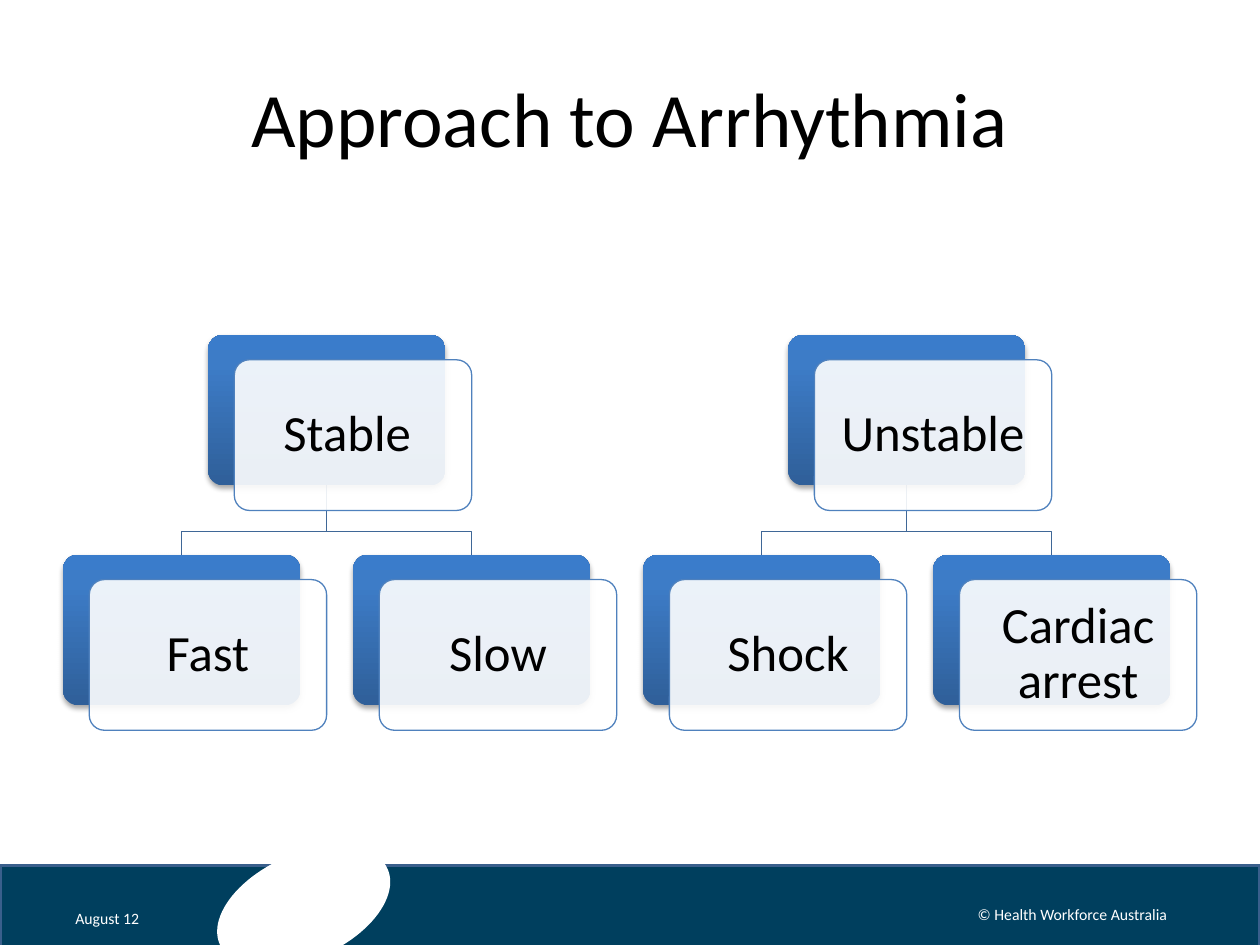
from lxml.etree import SubElement
from pptx import Presentation
from pptx.dml.color import RGBColor
from pptx.enum.shapes import MSO_SHAPE
from pptx.enum.text import MSO_ANCHOR, PP_ALIGN
from pptx.oxml import parse_xml
from pptx.oxml.ns import nsdecls, qn
from pptx.util import Pt

# Content
TITLE = "Approach to Arrhythmia"
BRANCHES = [
    ("Stable ", ["Fast", "Slow"]),
    ("Unstable", ["Shock", "Cardiac arrest"]),
]
DATE = "August 12"
COPYRIGHT = "© Health Workforce Australia"

# Colours
BLACK = RGBColor(0x00, 0x00, 0x00)
WHITE = RGBColor(0xFF, 0xFF, 0xFF)
NAVY = RGBColor(0x00, 0x3F, 0x5E)
BAND_EDGE = RGBColor(0x3A, 0x5F, 0x8C)
LINK_BLUE = RGBColor(0x3F, 0x67, 0x97)
CARD_EDGE = RGBColor(0x4F, 0x81, 0xBD)
CARD_GRADIENT = [
    (0, RGBColor(0x2F, 0x5F, 0x99)),
    (80, RGBColor(0x3D, 0x7C, 0xC7)),
    (100, RGBColor(0x3A, 0x7C, 0xCB)),
]

# Layout, in points
CARD_WIDTH, CARD_HEIGHT = 135.6, 86.1
LEFT, COLUMN_STEP = 36, 165.75
PARENT_TOP, CHILD_TOP = 191.3, 316.9
FRONT_RIGHT, FRONT_DOWN = 15.05, 14.3
LINK_BEND = 303.9


def write(shape, text, size=9, color=WHITE, align=PP_ALIGN.LEFT,
          inset=(7.2, 3.6), line_spacing=None):
    frame = shape.text_frame
    frame.word_wrap = True
    frame.vertical_anchor = MSO_ANCHOR.MIDDLE
    frame.margin_left = frame.margin_right = Pt(inset[0])
    frame.margin_top = frame.margin_bottom = Pt(inset[1])
    para = frame.paragraphs[0]
    para.alignment = align
    para.line_spacing = line_spacing
    span = para.add_run()
    span.text = text
    span.font.name = "Calibri"
    span.font.size = Pt(size)
    span.font.color.rgb = color


def add_shape(page, kind, left, top, width, height, fill=None, line=None, weight=0.75):
    shape = page.shapes.add_shape(kind, Pt(left), Pt(top), Pt(width), Pt(height))
    shape.shadow.inherit = False
    if fill is not None:
        shape.fill.solid()
        shape.fill.fore_color.rgb = fill
    if line is None:
        shape.line.fill.background()
    else:
        shape.line.color.rgb = line
        shape.line.width = Pt(weight)
    return shape


def set_gradient(shape, stops):
    shape.fill.background()
    marks = "".join(
        f'<a:gs pos="{position * 1000}"><a:srgbClr val="{color}"/></a:gs>'
        for position, color in stops)
    gradient = parse_xml(
        f'<a:gradFill {nsdecls("a")} rotWithShape="1"><a:gsLst>{marks}</a:gsLst>'
        '<a:lin ang="16200000" scaled="0"/></a:gradFill>')
    properties = shape.fill._xPr
    properties.replace(properties.find(qn("a:noFill")), gradient)


def set_shadow(shape):
    effects = shape.fill._xPr.find(qn("a:effectLst"))
    shadow = SubElement(effects, qn("a:outerShdw"), blurRad=str(Pt(3.1)),
                        dist=str(Pt(1.8)), dir="5400000", rotWithShape="0")
    color = SubElement(shadow, qn("a:srgbClr"), val=str(BLACK))
    SubElement(color, qn("a:alpha"), val="35000")


def add_card(page, text, left, top):
    back = add_shape(page, MSO_SHAPE.ROUNDED_RECTANGLE, left, top, CARD_WIDTH, CARD_HEIGHT)
    set_gradient(back, CARD_GRADIENT)
    set_shadow(back)
    front = add_shape(page, MSO_SHAPE.ROUNDED_RECTANGLE, left + FRONT_RIGHT,
                      top + FRONT_DOWN, CARD_WIDTH, CARD_HEIGHT,
                      fill=WHITE, line=CARD_EDGE)
    white = front.fill._xPr.find(qn("a:solidFill"))[0]
    SubElement(white, qn("a:alpha"), val="90000")
    for shape in (back, front):
        shape.adjustments[0] = 0.1
    write(front, text, size=29, color=BLACK, align=PP_ALIGN.CENTER,
          inset=(11, 11), line_spacing=0.9)


def add_link(page, parent_left, child_left):
    start, end = (left + CARD_WIDTH / 2 for left in (parent_left, child_left))
    builder = page.shapes.build_freeform(Pt(start), Pt(PARENT_TOP + CARD_HEIGHT))
    corners = [(start, LINK_BEND), (end, LINK_BEND), (end, CHILD_TOP)]
    builder.add_line_segments([(Pt(x), Pt(y)) for x, y in corners], close=False)
    link = builder.convert_to_shape()
    link.shadow.inherit = False
    link.fill.background()
    link.line.color.rgb = LINK_BLUE
    link.line.width = Pt(0.75)


def add_text(page, text, left, top, width, height, **style):
    box = page.shapes.add_textbox(Pt(left), Pt(top), Pt(width), Pt(height))
    write(box, text, **style)


def main():
    deck = Presentation()
    deck.slide_width, deck.slide_height = Pt(720), Pt(540)
    page = deck.slides.add_slide(deck.slide_layouts[5])

    # Footer band with white oval
    add_shape(page, MSO_SHAPE.RECTANGLE, 0, 494.6, 720, 46.8,
              fill=NAVY, line=BAND_EDGE, weight=2)
    oval = add_shape(page, MSO_SHAPE.OVAL, 121, 488.2, 105.1, 59.8, fill=WHITE)
    oval.rotation = 335.7

    # Title
    title = page.shapes.title
    title.left, title.top, title.width, title.height = Pt(36), Pt(21.6), Pt(648), Pt(90)
    write(title, TITLE, size=44, color=BLACK, align=PP_ALIGN.CENTER)

    # Tree positions: each parent is centred over its children
    cards, links = [], []
    column = 0
    for parent, children in BRANCHES:
        lefts = [LEFT + (column + i) * COLUMN_STEP for i in range(len(children))]
        column += len(children)
        parent_left = sum(lefts) / len(lefts)
        cards.append((parent, parent_left, PARENT_TOP))
        for child, left in zip(children, lefts):
            cards.append((child, left, CHILD_TOP))
            links.append((parent_left, left))

    # Links lie behind the cards
    for link in links:
        add_link(page, *link)
    for card in cards:
        add_card(page, *card)

    # Footer text
    add_text(page, DATE, 36, 514.1, 57.6, 20.9)
    add_text(page, COPYRIGHT, 535.7, 508.3, 154.1, 28.8, align=PP_ALIGN.CENTER)

    deck.save("out.pptx")


if __name__ == "__main__":
    main()
